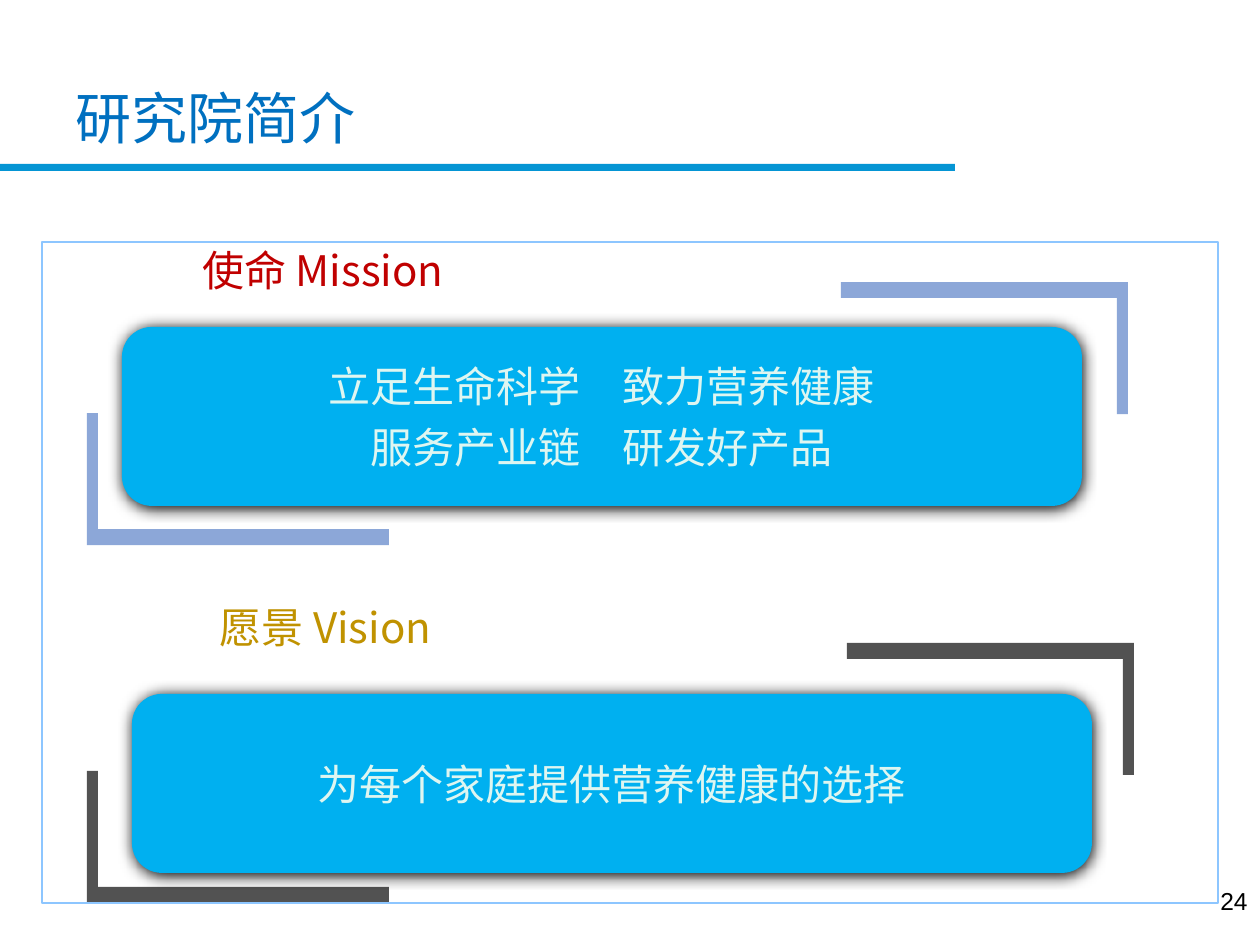
from lxml import etree
from pptx import Presentation
from pptx.dml.color import RGBColor
from pptx.enum.shapes import MSO_SHAPE as Shape
from pptx.enum.text import MSO_ANCHOR as Anchor, PP_ALIGN as Align
from pptx.oxml import parse_xml
from pptx.oxml.ns import nsdecls, qn
from pptx.util import Emu, Pt

PX_PER_INCH = 126
LATIN, CJK = "Arial", "Noto Sans CJK SC"
COLORS = {
    "rule": "0595D4", "title": "0070C0", "mission": "C00000",
    "vision": "C09200", "mission_bracket": "1A50B2",
    "vision_bracket": "000000", "card": "00B0F0", "card_text": "DEF6F1",
    "frame": "8DC6FF", "number": "000000",
}


def px(value):
    return Emu(round(value * 914400 / PX_PER_INCH))


def color(name):
    return RGBColor.from_string(COLORS[name])


def paint(shape, fill=None, line=None, alpha=None):
    shape.shadow.inherit = False
    if fill:
        shape.fill.solid()
        shape.fill.fore_color.rgb = color(fill)
        if alpha:
            tint = shape.fill._xPr.find(".//" + qn("a:srgbClr"))
            etree.SubElement(tint, qn("a:alpha")).set("val", str(alpha * 1000))
    else:
        shape.fill.background()
    if line:
        shape.line.color.rgb = color(line)
        shape.line.width = Pt(0.75)
    else:
        shape.line.fill.background()


def add_box(page, kind, left, top, width, height, **style):
    shape = page.shapes.add_shape(kind, px(left), px(top), px(width), px(height))
    paint(shape, **style)
    return shape


def write(shape, lines, size, ink, font=CJK, align=Align.CENTER,
          anchor=Anchor.TOP, wrap=False):
    frame = shape.text_frame
    frame.word_wrap = wrap
    frame.vertical_anchor = anchor
    for index, line in enumerate(lines):
        para = frame.add_paragraph() if index else frame.paragraphs[0]
        para.alignment = align
        if index:
            para.space_before = Pt(6)
        span = para.add_run()
        span.text = line
        span.font.size = Pt(size)
        span.font.name = font
        span.font.color.rgb = color(ink)
        east_asian = etree.SubElement(span.font._element, qn("a:ea"))
        east_asian.set("typeface", CJK)


def add_text(page, left, top, width, height, line, size, ink, **style):
    box = page.shapes.add_textbox(px(left), px(top), px(width), px(height))
    write(box, [line], size, ink, **style)


def add_bracket(page, corner_x, corner_y, length, turn, fill, alpha):
    """Draw an L from its outer corner; turn is 1 for lower left, -1 for upper right."""
    height, bar, post = 132, 16, 11
    offsets = [(0, 0), (length, 0), (length, bar), (post, bar),
               (post, height), (0, height)]
    points = [(px(corner_x + turn * x), px(corner_y - turn * y))
              for x, y in offsets]
    builder = page.shapes.build_freeform(*points[0])
    builder.add_line_segments(points[1:], close=True)
    paint(builder.convert_to_shape(), fill=fill, alpha=alpha)


def add_card(page, left, top, lines):
    card = add_box(page, Shape.ROUNDED_RECTANGLE, left, top, 960, 179, fill="card")
    card.adjustments[0] = 0.167
    effects = card._element.spPr.find(qn("a:effectLst"))
    effects.append(parse_xml(
        f'<a:outerShdw {nsdecls("a")} blurRad="{Pt(8.5)}" dist="{Pt(1)}" '
        'dir="5400000" algn="t" rotWithShape="0">'
        '<a:srgbClr val="000000"/></a:outerShdw>'))
    write(card, lines, 24, "card_text", anchor=Anchor.MIDDLE)


def main():
    deck = Presentation()
    deck.slide_width, deck.slide_height = px(1260), px(945)
    page = deck.slides.add_slide(deck.slide_layouts[6])

    # Title and rule
    add_box(page, Shape.RECTANGLE, 0, 164, 955, 7, fill="rule")
    add_text(page, 63, 38, 1134, 158, "研究院简介", 32, "title", font=LATIN,
             align=Align.LEFT, anchor=Anchor.MIDDLE, wrap=True)

    # Corner brackets
    for left_y, right_x, right_y, fill, alpha in [
            (903, 1134, 643, "vision_bracket", 68),
            (545, 1128, 282, "mission_bracket", 50)]:
        add_bracket(page, 87, left_y, 302, 1, fill, alpha)
        add_bracket(page, right_x, right_y, 287, -1, fill, alpha)

    # Headings
    add_text(page, 179, 238, 288, 64, "使命 Mission", 24, "mission")
    add_text(page, 195, 595, 261, 64, "愿景 Vision", 24, "vision")

    # Statement cards
    add_card(page, 132, 694, ["为每个家庭提供营养健康的选择"])
    add_card(page, 122, 327, ["立足生命科学　致力营养健康", "服务产业链　研发好产品"])

    # Page number and content frame
    add_text(page, 966, 880, 294, 65, "24", 14, "number", font=LATIN,
             align=Align.RIGHT, wrap=True)
    add_box(page, Shape.RECTANGLE, 42, 242, 1176, 661, line="frame")

    deck.save("out.pptx")


if __name__ == "__main__":
    main()
